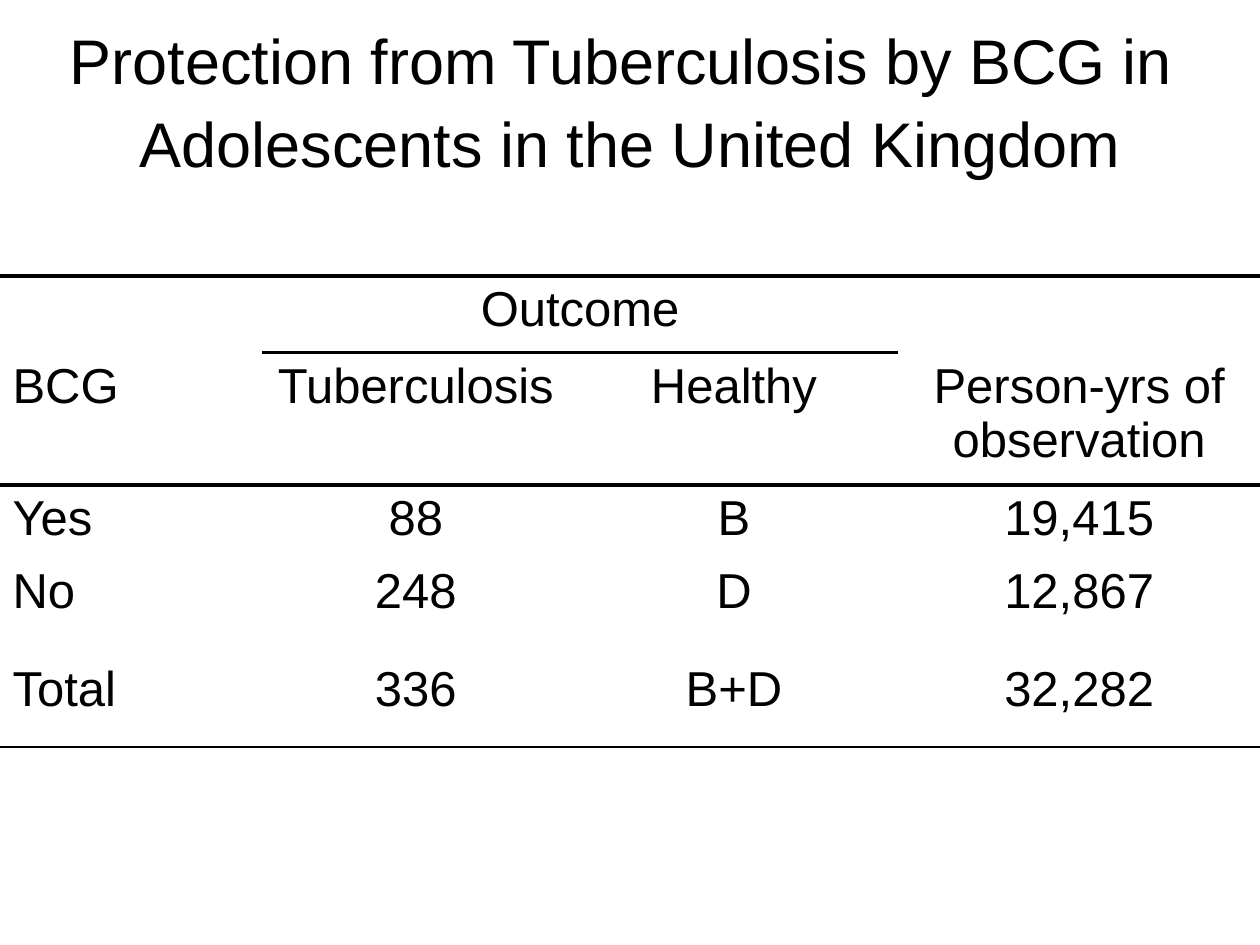
from dataclasses import dataclass

import pptx
import pptx.dml.color
import pptx.enum.text
import pptx.oxml
import pptx.oxml.ns
import pptx.util

Align = pptx.enum.text.PP_ALIGN


@dataclass(frozen=True)
class Theme:
    font: str = "Arial"
    ink: str = "000000"
    title_size: int = 36
    body_size: int = 28
    spacing: float = 0.2
    heavy_rule: float = 2.25
    light_rule: float = 1


TITLE = ["Protection from Tuberculosis by BCG in ", "Adolescents in the United Kingdom"]
ROWS = [
    ["", "Outcome", "", ""],
    ["BCG", "Tuberculosis", "Healthy", "Person-yrs of observation"],
    ["Yes", "88", "B", "19,415"],
    ["No", "248", "D", "12,867"],
    ["Total", "336", "B+D", "32,282"],
]
COLUMN_WIDTHS = [2.08, 2.44, 2.61, 2.87]
ROW_HEIGHTS = [2.02, 0.61, 1.05, 0.58, 0.78, 0.72]
TABLE_TOP = 0.17


class SlideBuilder:
    def __init__(self, presentation, theme):
        self.theme = theme
        self.slide = presentation.slides.add_slide(presentation.slide_layouts[6])

    def table(self, top, widths, heights):
        inches = pptx.util.Inches
        shape = self.slide.shapes.add_table(
            len(heights), len(widths), 0, inches(top), inches(sum(widths)), inches(sum(heights))
        )
        table = shape.table
        table.first_row = table.horz_banding = False
        for column, width in zip(table.columns, widths):
            column.width = inches(width)
        for row, height in zip(table.rows, heights):
            row.height = inches(height)
        return table

    def text(self, cell, lines, size, align=Align.CENTER, space_after=0):
        frame = cell.text_frame
        for index, line in enumerate(lines):
            paragraph = frame.add_paragraph() if index else frame.paragraphs[0]
            paragraph.alignment = align
            paragraph.space_before = pptx.util.Pt(size * self.theme.spacing)
            paragraph.space_after = pptx.util.Pt(size * space_after)
            run = paragraph.add_run()
            run.text = line
            run.font.name = self.theme.font
            run.font.size = pptx.util.Pt(size)
            run.font.color.rgb = pptx.dml.color.RGBColor.from_string(self.theme.ink)

    def rules(self, table, rules):
        """Draw only the given rules: (row above, column) -> width in points."""
        for row in range(len(table.rows)):
            for column in range(len(table.columns)):
                cell = table.cell(row, column)
                self.border(cell, "lnL")
                self.border(cell, "lnR")
                self.border(cell, "lnT", rules.get((row - 1, column)))
                self.border(cell, "lnB", rules.get((row, column)))
                cell.fill.background()

    def border(self, cell, side, width=None):
        fill = "<a:noFill/>"
        if width:
            fill = f'<a:solidFill><a:srgbClr val="{self.theme.ink}"/></a:solidFill>'
        points = pptx.util.Pt(width or 0)
        namespace = pptx.oxml.ns.nsdecls("a")
        line = pptx.oxml.parse_xml(f'<a:{side} {namespace} w="{points}">{fill}</a:{side}>')
        cell._tc.get_or_add_tcPr().append(line)


def main():
    presentation = pptx.Presentation()
    presentation.slide_width = pptx.util.Inches(10)
    presentation.slide_height = pptx.util.Inches(7.5)
    theme = Theme()
    builder = SlideBuilder(presentation, theme)

    table = builder.table(TABLE_TOP, COLUMN_WIDTHS, ROW_HEIGHTS)
    table.cell(0, 0).merge(table.cell(0, 3))
    table.cell(1, 1).merge(table.cell(1, 2))

    builder.text(table.cell(0, 0), TITLE, theme.title_size)
    for row, values in enumerate(ROWS, start=1):
        space_after = theme.spacing if row == len(ROWS) else 0
        for column, value in enumerate(values):
            if value:
                align = Align.CENTER if column else Align.LEFT
                builder.text(table.cell(row, column), [value], theme.body_size, align, space_after)

    rules = {(row, column): theme.heavy_rule for row in (0, 2) for column in range(4)}
    rules.update({(1, column): theme.heavy_rule for column in (1, 2)})
    rules.update({(len(ROWS), column): theme.light_rule for column in range(4)})
    builder.rules(table, rules)

    presentation.save("out.pptx")


if __name__ == "__main__":
    main()
